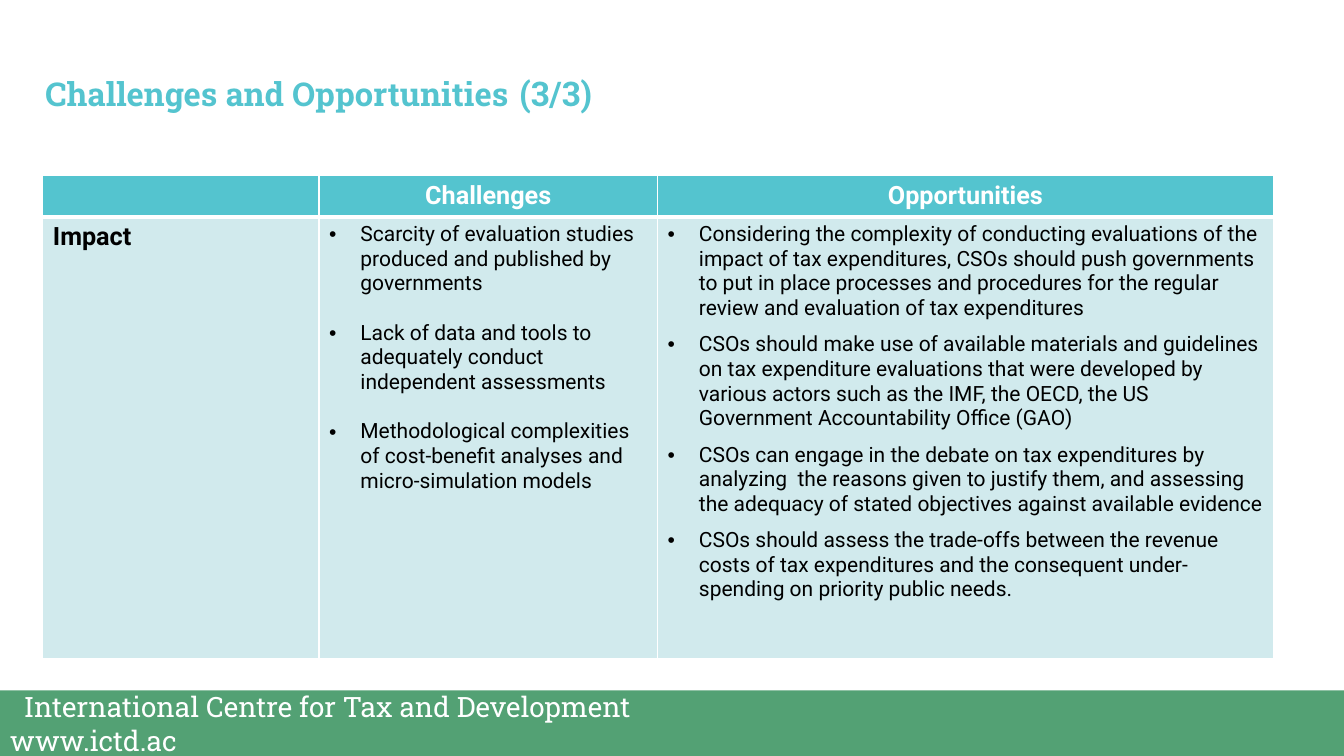
from dataclasses import dataclass
from lxml.etree import SubElement as Sub
from pptx import Presentation
from pptx.dml.color import RGBColor as Rgb
from pptx.enum.shapes import MSO_SHAPE as Shape
from pptx.enum.text import MSO_ANCHOR as Anchor, MSO_AUTO_SIZE as Fit, PP_ALIGN as Align
from pptx.oxml.ns import qn
from pptx.util import Cm, Pt


@dataclass(frozen=True)
class Theme:
    teal: str = "54C4CF"
    pale: str = "D1EAED"
    green: str = "53A174"
    white: str = "FFFFFF"
    black: str = "000000"
    sans: str = "Roboto"
    slab: str = "Roboto Slab"
    title: float = 23.4
    gap: float = 32.4
    count: float = 24.3
    foot: float = 20
    head: float = 18
    body: float = 15


class Deck:
    def __init__(self, theme):
        self.theme = theme
        self.prs = Presentation()
        self.prs.slide_width, self.prs.slide_height = Cm(33.87), Cm(19.05)
        self.slide = self.prs.slides.add_slide(self.prs.slide_layouts[5])

    def run(self, para, text, face, size, color, bold=False):
        run = para.add_run()
        run.text = text
        font = run.font
        font.name, font.size, font.bold = face, Pt(size), bold
        font.color.rgb = Rgb.from_string(color)

    def paint(self, fill, color):
        fill.solid()
        fill.fore_color.rgb = Rgb.from_string(color)

    def title(self, parts, left, top, width, height):
        box = self.slide.shapes.title
        box.left, box.top, box.width, box.height = map(Cm, (left, top, width, height))
        frame = box.text_frame
        frame.auto_size, frame.vertical_anchor = Fit.NONE, Anchor.TOP
        para = frame.paragraphs[0]
        para.alignment = Align.LEFT
        for text, size in parts:
            self.run(para, text, self.theme.slab, size, self.theme.teal, True)

    def footer(self, lines, left, top, width, height):
        bar = self.slide.shapes.add_shape(Shape.RECTANGLE, *map(Cm, (left, top, width, height)))
        bar.shadow.inherit = False
        self.paint(bar.fill, self.theme.green)
        bar.line.fill.background()
        frame = bar.text_frame
        frame.word_wrap, frame.vertical_anchor = True, Anchor.MIDDLE
        for i, (text, indent) in enumerate(lines):
            para = frame.paragraphs[0] if i == 0 else frame.add_paragraph()
            para.alignment = Align.LEFT
            para._p.get_or_add_pPr().set("marL", str(Cm(indent)))
            self.run(para, text, self.theme.slab, self.theme.foot, self.theme.white)

    def table(self, left, top, cols, rows):
        frame = self.slide.shapes.add_table(
            len(rows), len(cols), *map(Cm, (left, top, sum(cols), sum(rows))))
        grid = frame.table
        for col, width in zip(grid.columns, cols):
            col.width = Cm(width)
        for row, height in zip(grid.rows, rows):
            row.height = Cm(height)
        return grid

    def cell(self, cell, color, edges):
        props = cell._tc.get_or_add_tcPr()
        for side, width in zip("LRTB", edges):
            line = Sub(props, qn(f"a:ln{side}"), w=str(Pt(width)))
            fill = Sub(line, qn("a:solidFill"))
            Sub(fill, qn("a:srgbClr"), val=self.theme.white)
        self.paint(cell.fill, color)

    def label(self, cell, text, color, align):
        para = cell.text_frame.paragraphs[0]
        para.alignment = align
        self.run(para, text, self.theme.sans, self.theme.head, color, True)

    def bullets(self, cell, items, space):
        frame = cell.text_frame
        for i, text in enumerate(items):
            para = frame.paragraphs[0] if i == 0 else frame.add_paragraph()
            props = para._p.get_or_add_pPr()
            props.set("marL", str(Cm(0.79)))
            props.set("indent", str(-Cm(0.79)))
            Sub(props, qn("a:buFont"), typeface="Arial")
            Sub(props, qn("a:buChar"), char="•")
            if i:
                para.space_before = Pt(space)
            self.run(para, text, self.theme.sans, self.theme.body, self.theme.black)


HEADS = ["", "Challenges", "Opportunities"]
ISSUES = [
    "Scarcity of evaluation studies produced and published by governments",
    "Lack of data and tools to adequately conduct independent assessments",
    "Methodological complexities of cost-benefit analyses and micro-simulation models",
]
CHANCES = [
    "Considering the complexity of conducting evaluations of the impact of tax expenditures, "
    "CSOs should push governments to put in place processes and procedures for the regular "
    "review and evaluation of tax expenditures",
    "CSOs should make use of available materials and guidelines on tax expenditure evaluations "
    "that were developed by various actors such as the IMF, the OECD, the US Government "
    "Accountability Office (GAO)",
    "CSOs can engage in the debate on tax expenditures by analyzing  the reasons given to "
    "justify them, and assessing the adequacy of stated objectives against available evidence",
    "CSOs should assess the trade-offs between the revenue costs of tax expenditures and the "
    "consequent under-spending on priority public needs.",
]


def main():
    theme = Theme()
    deck = Deck(theme)
    deck.footer([("International Centre for Tax and Development", 0.35), ("www.ictd.ac", 0)],
                0, 17.4, 33.87, 1.65)
    deck.title([("Challenges and Opportunities", theme.title), (" ", theme.gap),
                ("(3/3)", theme.count)], 0.89, 1.42, 25.45, 1.88)
    grid = deck.table(1.08, 4.43, [6.96, 8.53, 15.52], [1.04, 11.13])
    for col, head in enumerate(HEADS):
        deck.cell(grid.cell(0, col), theme.teal, (1, 1, 1, 3))
        deck.cell(grid.cell(1, col), theme.pale, (1, 1, 3, 1))
        if head:
            deck.label(grid.cell(0, col), head, theme.white, Align.CENTER)
    deck.label(grid.cell(1, 0), "Impact", theme.black, Align.LEFT)
    deck.bullets(grid.cell(1, 1), ISSUES, 17.6)
    deck.bullets(grid.cell(1, 2), CHANCES, 8.2)
    deck.prs.save("out.pptx")


if __name__ == "__main__":
    main()
